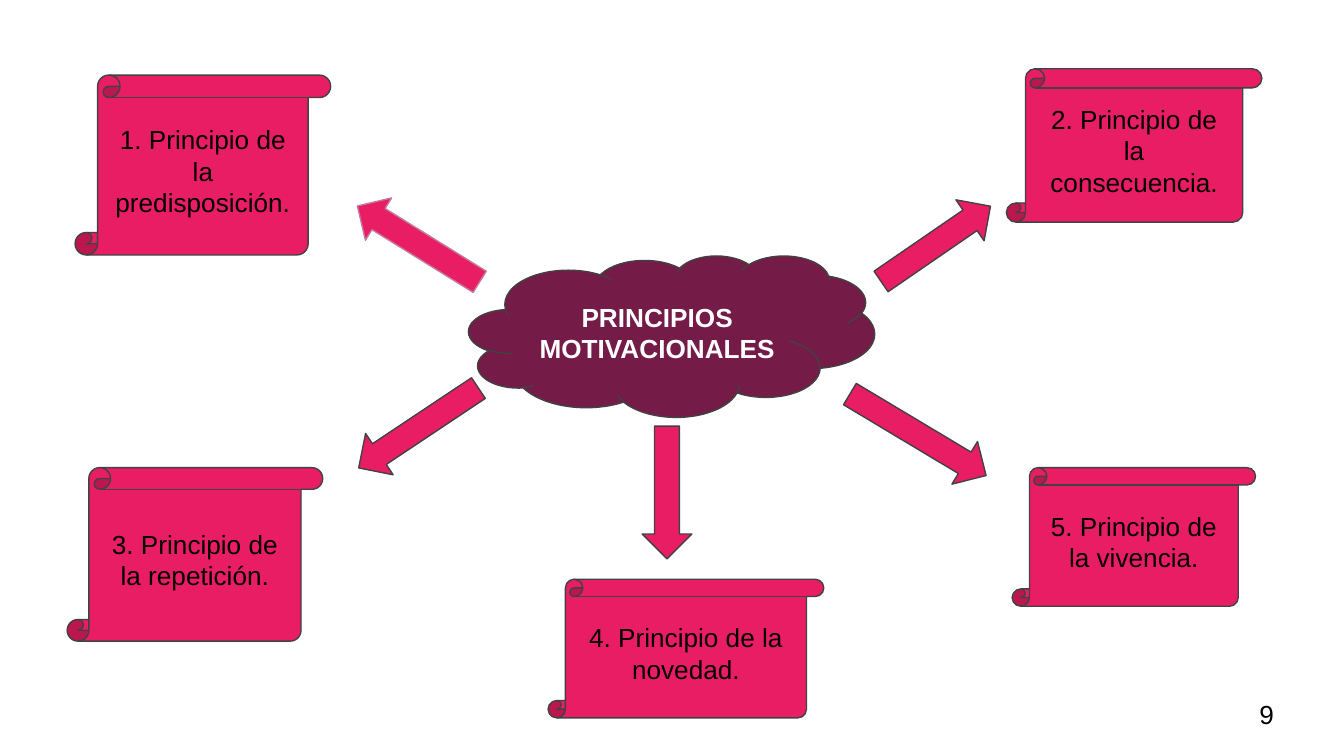
from dataclasses import dataclass

from pptx import Presentation
from pptx.dml.color import RGBColor
from pptx.enum.shapes import MSO_SHAPE as SHAPE
from pptx.enum.text import MSO_ANCHOR as ANCHOR, PP_ALIGN as ALIGN
from pptx.util import Cm, Pt


@dataclass(frozen=True)
class Theme:
    font: str = "Arial"
    size: float = 14
    line_width: float = 0.75
    pink: str = "E91D63"
    plum: str = "741B47"
    outline: str = "424242"
    mauve: str = "C27BA0"
    black: str = "000000"
    white: str = "FFFFFF"


THEME = Theme()
INSET = Cm(0.25)
ARROW_HEIGHT = 0.94

# Text, left, top, width, height (cm)
SCROLLS = [
    ("4. Principio de la novedad.", 10.36, 10.95, 5.21, 2.62),
    ("3. Principio de la repetición.", 1.27, 8.84, 4.83, 3.28),
    ("1. Principio de la predisposición.", 1.42, 1.42, 4.83, 3.4),
    ("5. Principio de la vivencia.", 19.13, 8.84, 4.6, 2.62),
    ("2. Principio de la consecuencia.", 19.02, 1.3, 4.83, 2.9),
]

# Left, top, length (cm), rotation, outline
ARROWS = [
    (6.55, 7.62, 2.72, 146.3, THEME.outline),
    (6.55, 4.14, 2.72, 211.8, THEME.mauve),
    (16.43, 4.14, 2.51, 325.5, THEME.outline),
    (15.85, 7.75, 3, 30.9, THEME.outline),
    (11.35, 8.84, 2.51, 90, THEME.outline),
]


def write_text(sp, text, color, bold=False, align=ALIGN.CENTER):
    tf = sp.text_frame
    tf.word_wrap = True
    tf.vertical_anchor = ANCHOR.MIDDLE
    tf.margin_left = tf.margin_right = tf.margin_top = tf.margin_bottom = INSET
    tf.text = text
    p = tf.paragraphs[0]
    p.alignment = align
    font = p.runs[0].font
    font.name = THEME.font
    font.size = Pt(THEME.size)
    font.bold = bold
    font.color.rgb = RGBColor.from_string(color)


def add_figure(s, kind, box, fill, line=THEME.outline):
    sp = s.shapes.add_shape(kind, *map(Cm, box))
    sp.shadow.inherit = False
    sp.fill.solid()
    sp.fill.fore_color.rgb = RGBColor.from_string(fill)
    sp.line.color.rgb = RGBColor.from_string(line)
    sp.line.width = Pt(THEME.line_width)
    return sp


def add_scroll(s, text, *box):
    sp = add_figure(s, SHAPE.VERTICAL_SCROLL, box, THEME.pink)
    write_text(sp, text, THEME.black)


def add_arrow(s, left, top, length, rotation, line):
    box = (left, top, length, ARROW_HEIGHT)
    sp = add_figure(s, SHAPE.RIGHT_ARROW, box, THEME.pink, line)
    sp.rotation = rotation


def main():
    prs = Presentation()
    prs.slide_width, prs.slide_height = Cm(25.4), Cm(14.29)
    s = prs.slides.add_slide(prs.slide_layouts[6])

    # Central idea
    cloud = add_figure(s, SHAPE.CLOUD, (8.86, 4.83, 7.67, 3.05), THEME.plum)
    write_text(cloud, "PRINCIPIOS MOTIVACIONALES", THEME.white, bold=True)

    # Principles and the arrows that lead to them
    for scroll in SCROLLS:
        add_scroll(s, *scroll)
    for arrow in ARROWS:
        add_arrow(s, *arrow)

    # Slide number
    number = s.shapes.add_textbox(Cm(23.55), Cm(12.95), Cm(1.52), Cm(1.09))
    write_text(number, "9", THEME.black, align=ALIGN.LEFT)

    prs.save("out.pptx")


if __name__ == "__main__":
    main()
